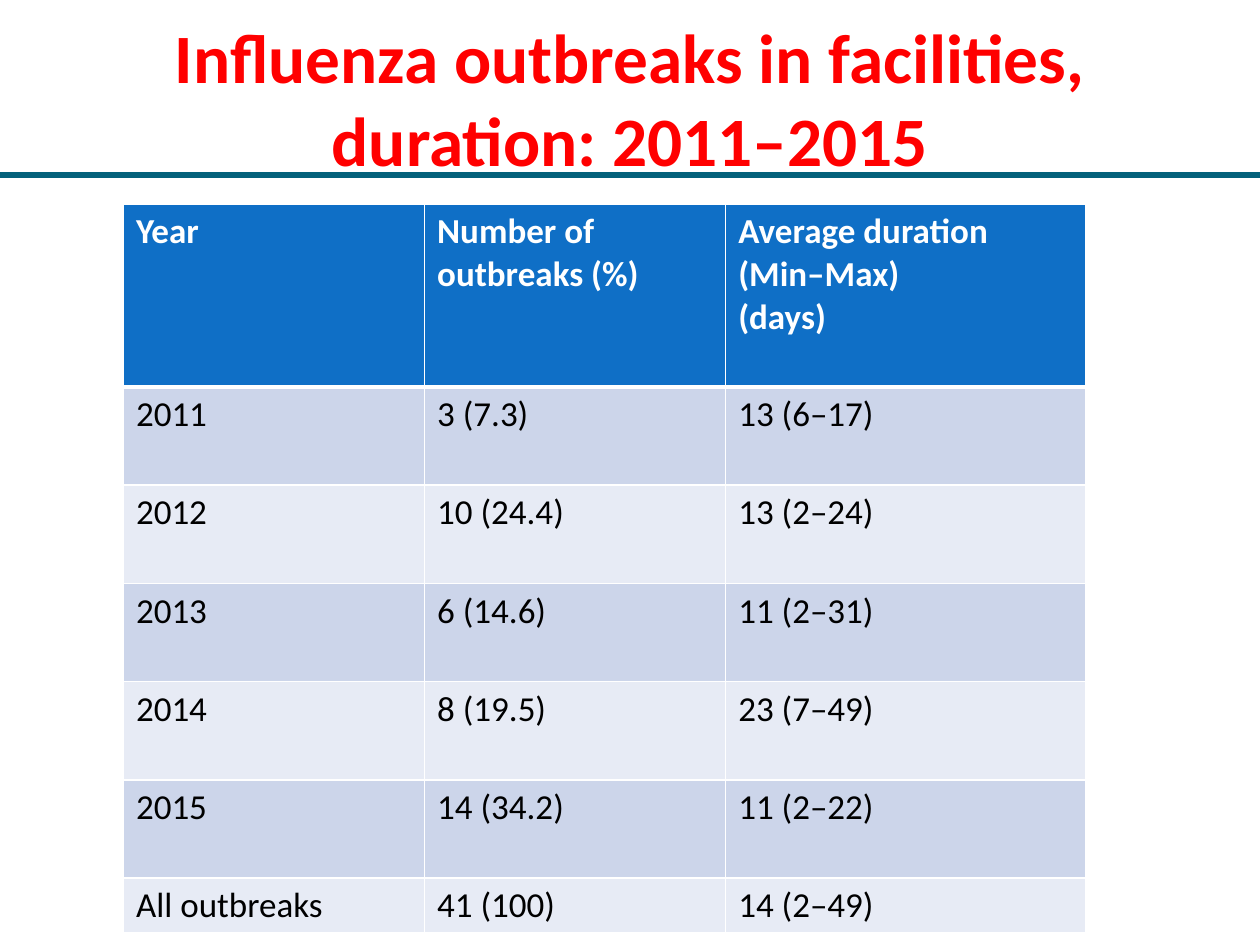
from lxml.etree import SubElement
from pptx import Presentation
from pptx.dml.color import RGBColor
from pptx.enum.shapes import MSO_CONNECTOR
from pptx.enum.text import MSO_ANCHOR, PP_ALIGN
from pptx.oxml.ns import qn
from pptx.util import Inches, Pt

TITLE = "Influenza outbreaks in facilities, duration: 2011–2015"
HEADER = ["Year", "Number of outbreaks (%)", "Average duration (Min–Max)\n(days)"]
OUTBREAKS = [
    ("2011", "3 (7.3)", "13 (6–17)"),
    ("2012", "10 (24.4)", "13 (2–24)"),
    ("2013", "6 (14.6)", "11 (2–31)"),
    ("2014", "8 (19.5)", "23 (7–49)"),
    ("2015", "14 (34.2)", "11 (2–22)"),
    ("All outbreaks", "41 (100)", "14 (2–49)"),
]
WIDTH, HEIGHT = 10, 7.5
RULE_Y = 1.39
TABLE_LEFT, TABLE_TOP = 0.98, 1.62
COLUMN_WIDTHS = [2.39, 2.39, 2.86]
ROW_HEIGHTS = [1.45] + [0.78] * 5 + [0.43]
HEADER_FILL, BAND_FILLS = "0F6FC6", ["CCD5EA", "E7EBF5"]
WHITE, BLACK, RED, TEAL = "FFFFFF", "000000", "FF0000", "04617B"


def rgb(color):
    return RGBColor.from_string(color)


def write(frame, text, size, color, bold=False, align=PP_ALIGN.LEFT):
    """Fill a text frame, one paragraph for each line of the text."""
    for i, line in enumerate(text.split("\n")):
        paragraph = frame.add_paragraph() if i else frame.paragraphs[0]
        paragraph.alignment = align
        run = paragraph.add_run()
        run.text = line
        run.font.name = "Calibri"
        run.font.size = Pt(size)
        run.font.bold = bold
        run.font.color.rgb = rgb(color)


def set_borders(cell, color, widths):
    """Draw the cell's edges; the schema wants them ahead of the fill."""
    properties = cell._tc.get_or_add_tcPr()
    for position, (edge, points) in enumerate(widths.items()):
        line = SubElement(properties, qn(f"a:{edge}"), w=str(Pt(points)))
        fill = SubElement(line, qn("a:solidFill"))
        SubElement(fill, qn("a:srgbClr"), val=color)
        properties.insert(position, line)


def add_title(slide):
    box = slide.shapes.add_textbox(Inches(0.5), 0, Inches(WIDTH - 1), Inches(1.55))
    box.text_frame.word_wrap = True
    box.text_frame.vertical_anchor = MSO_ANCHOR.MIDDLE
    write(box.text_frame, TITLE, 39.6, RED, True, PP_ALIGN.CENTER)


def add_rule(slide):
    rule = slide.shapes.add_connector(
        MSO_CONNECTOR.STRAIGHT, 0, Inches(RULE_Y), Inches(WIDTH), Inches(RULE_Y))
    rule.line.color.rgb = rgb(TEAL)
    rule.line.width = Pt(3)
    SubElement(rule._element.spPr, qn("a:effectLst"))


def add_outbreak_table(slide):
    rows = [HEADER] + OUTBREAKS
    table = slide.shapes.add_table(
        len(rows), len(HEADER), Inches(TABLE_LEFT), Inches(TABLE_TOP),
        Inches(sum(COLUMN_WIDTHS)), Inches(sum(ROW_HEIGHTS))).table
    for column, width in zip(table.columns, COLUMN_WIDTHS):
        column.width = Inches(width)
    for r, texts in enumerate(rows):
        table.rows[r].height = Inches(ROW_HEIGHTS[r])
        is_header = r == 0
        for c, text in enumerate(texts):
            cell = table.cell(r, c)
            cell.fill.solid()
            cell.fill.fore_color.rgb = rgb(HEADER_FILL if is_header else BAND_FILLS[(r - 1) % 2])
            write(cell.text_frame, text, 20, WHITE if is_header else BLACK, is_header)
            set_borders(cell, WHITE, {"lnL": 1, "lnR": 1, "lnT": 3 if r == 1 else 1,
                                      "lnB": 3 if is_header else 1})


def main():
    deck = Presentation()
    deck.slide_width, deck.slide_height = Inches(WIDTH), Inches(HEIGHT)
    slide = deck.slides.add_slide(deck.slide_layouts[6])
    add_title(slide)
    add_rule(slide)
    add_outbreak_table(slide)
    deck.save("out.pptx")


if __name__ == "__main__":
    main()
